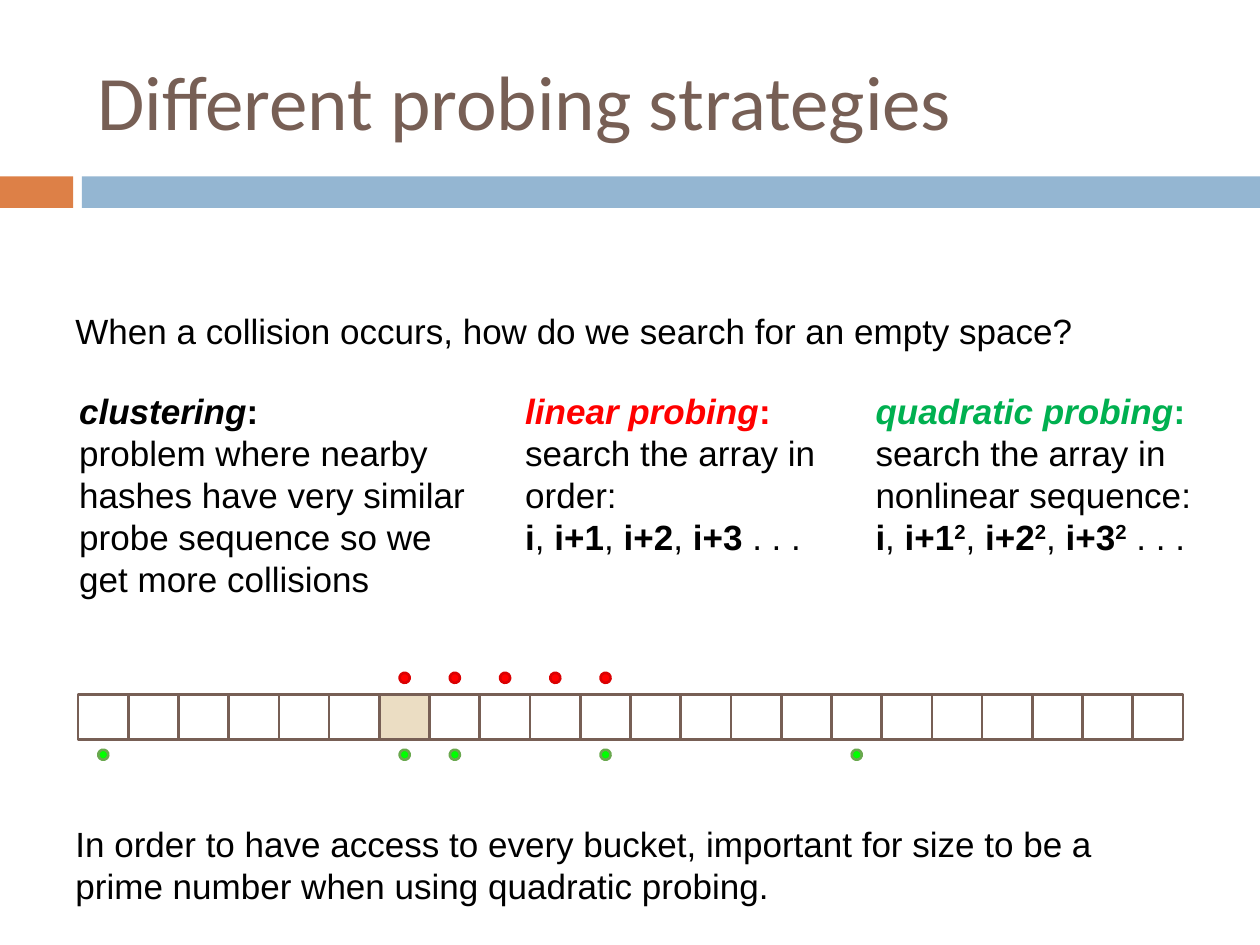
from pptx import Presentation
from pptx.dml.color import RGBColor
from pptx.enum.shapes import MSO_SHAPE
from pptx.enum.text import MSO_ANCHOR, MSO_AUTO_SIZE, PP_ALIGN
from pptx.util import Inches, Pt

BLACK, WHITE, BROWN, TAN = "000000", "FFFFFF", "775F55", "EBDDC3"
ORANGE, BLUE = "DD8047", "94B6D2"
RED, GREEN = "FF0000", "00B050"


def color(hex_string):
    return RGBColor.from_string(hex_string)


def add_run(paragraph, text, size=20, font="Arial", fill=BLACK,
            bold=False, italic=False, superscript=False):
    run = paragraph.add_run()
    run.text = text
    run.font.size = Pt(size)
    run.font.name = font
    run.font.color.rgb = color(fill)
    run.font.bold = bold
    run.font.italic = italic
    if superscript:
        run._r.get_or_add_rPr().set("baseline", "30000")


class SlideBuilder:
    """Holds the style and the current slide."""

    inset = Inches(0.1)
    line_width = Pt(1.5)

    def __init__(self, presentation):
        self.slide = presentation.slides.add_slide(presentation.slide_layouts[5])

    def title(self, text, left, top, width, height):
        heading = self.slide.shapes.title
        heading.left, heading.top = Inches(left), Inches(top)
        heading.width, heading.height = Inches(width), Inches(height)
        frame = heading.text_frame
        frame.auto_size = MSO_AUTO_SIZE.NONE
        frame.vertical_anchor = MSO_ANCHOR.MIDDLE
        frame.paragraphs[0].alignment = PP_ALIGN.LEFT
        add_run(frame.paragraphs[0], text, size=44, font="Calibri", fill=BROWN)

    def text(self, paragraphs, left, top, width, height):
        """Each paragraph is a list of (text, format) pairs."""
        box = self.slide.shapes.add_textbox(
            Inches(left), Inches(top), Inches(width), Inches(height))
        frame = box.text_frame
        frame.word_wrap = True
        frame.margin_left = frame.margin_right = self.inset
        frame.margin_top = frame.margin_bottom = self.inset
        for index, runs in enumerate(paragraphs):
            paragraph = frame.add_paragraph() if index else frame.paragraphs[0]
            for text, style in runs:
                add_run(paragraph, text, **style)

    def shape(self, preset, left, top, width, height, fill, line=None, rotation=0):
        shape = self.slide.shapes.add_shape(
            preset, Inches(left), Inches(top), Inches(width), Inches(height))
        shape.shadow.inherit = False
        shape.rotation = rotation
        shape.fill.solid()
        shape.fill.fore_color.rgb = color(fill)
        if line:
            shape.line.color.rgb = color(line)
            shape.line.width = self.line_width
        else:
            shape.line.fill.background()

    def bar(self, left, width, fill):
        self.shape(MSO_SHAPE.RECTANGLE, left, 1.4, width, 0.25, fill)

    def bucket(self, center_x, center_y, length, depth, fill):
        self.shape(MSO_SHAPE.RECTANGLE, center_x - depth / 2, center_y - length / 2,
                   depth, length, fill, BROWN, rotation=270)

    def probe(self, center_x, center_y, fill, line):
        size = 0.08
        self.shape(MSO_SHAPE.OVAL, center_x - size / 2, center_y - size / 2,
                   size, size, fill, line, rotation=133.1)


def term(name, fill, colon=":"):
    return [(name, dict(fill=fill, bold=True, italic=True)),
            (colon, dict(fill=fill, bold=True))]


def probe_sequence(exponent=None):
    runs = [("i", dict(bold=True))]
    for step in (1, 2, 3):
        runs += [(", ", {}), (f"i+{step}", dict(bold=True))]
        if exponent:
            runs.append((exponent, dict(bold=True, superscript=True)))
    return runs + [(" . . .", {})]


def main():
    presentation = Presentation()
    presentation.slide_width, presentation.slide_height = Inches(10), Inches(7.5)
    builder = SlideBuilder(presentation)

    # Heading and colour bars
    builder.bar(0, 0.58, ORANGE)
    builder.bar(0.65, 9.35, BLUE)
    builder.title("Different probing strategies", 0.67, 0.25, 8.92, 1.08)

    # Question and the three definitions
    builder.text([[("When a collision occurs, how do we search for an empty space?", {})]],
                 0.5, 2.36, 8.41, 0.55)
    clustering = [
        term("clustering", BLACK),
        [("problem where nearby hashes have very similar probe sequence "
          "so we get more collisions", {})],
    ]
    linear = [
        term("linear probing", RED),
        [("search the array in order:", {})],
        probe_sequence(),
    ]
    quadratic = [
        term("quadratic probing", GREEN, ": ")
        + [("search the array in nonlinear sequence:", {})],
        probe_sequence("2"),
    ]
    builder.text(clustering, 0.53, 2.99, 3.42, 1.74)
    builder.text(linear, 4.07, 2.99, 2.52, 1.53)
    builder.text(quadratic, 6.85, 2.99, 2.82, 1.53)

    # Hash table, with the bucket of the collision shaded
    bucket_count, collision = 22, 6
    table_left, table_width, table_middle = 0.62, 8.77, 5.69
    pitch = table_width / bucket_count
    centers = [table_left + pitch * (index + 0.5) for index in range(bucket_count)]
    for index, center in enumerate(centers):
        builder.bucket(center, table_middle, 0.4, 0.36,
                       TAN if index == collision else WHITE)

    # Linear probes above the table, quadratic probes below
    for step in range(5):
        builder.probe(centers[collision + step], 5.38, RED, "DA0002")
        builder.probe(centers[(collision + step ** 2) % bucket_count], 5.99,
                      "00FF00", "6AA84F")

    # Conclusion
    builder.text([[("In order to have access to every bucket, important for size to be a "
                    "prime number when using quadratic probing.", {})]],
                 0.5, 6.43, 8.41, 0.79)

    presentation.save("out.pptx")


if __name__ == "__main__":
    main()
